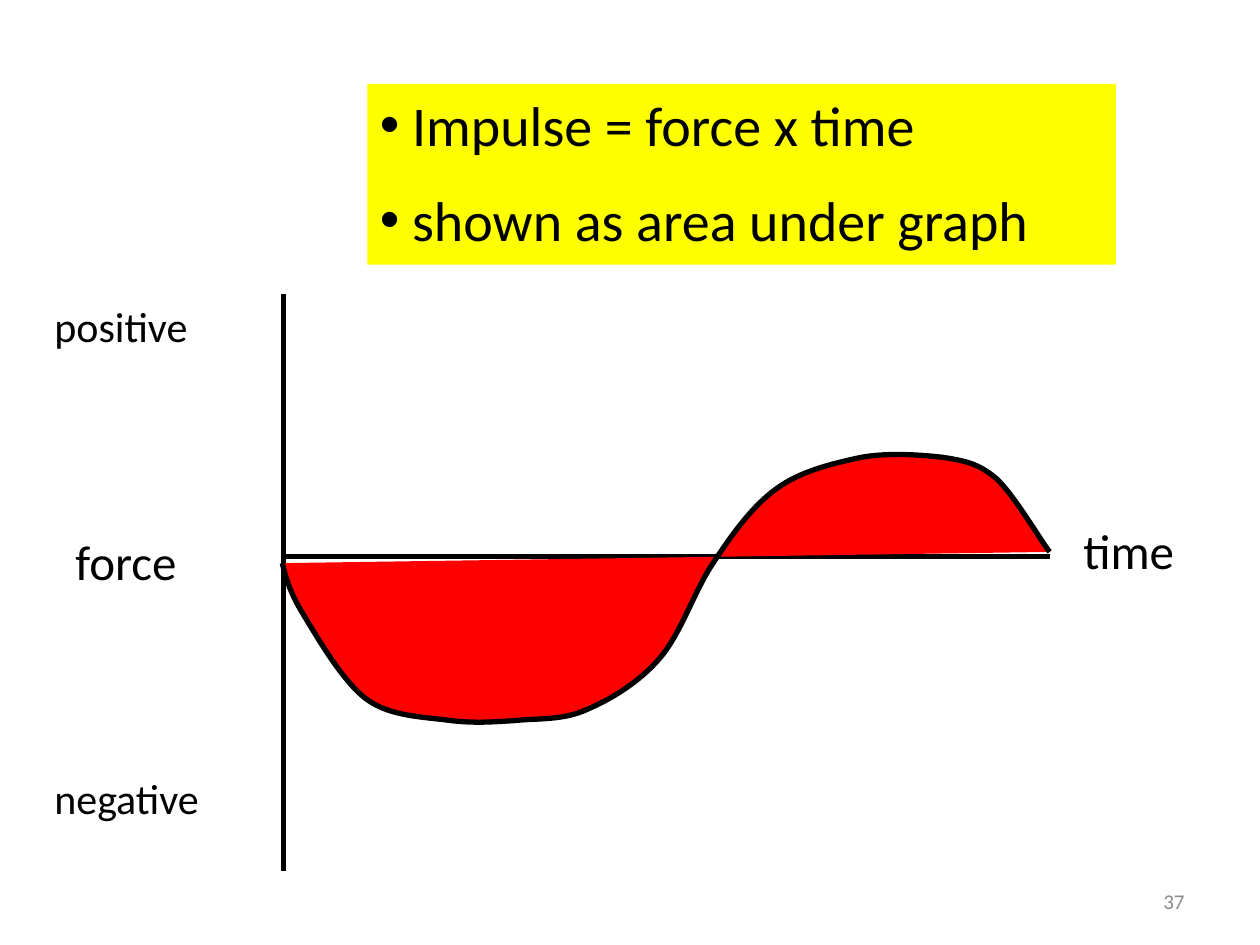
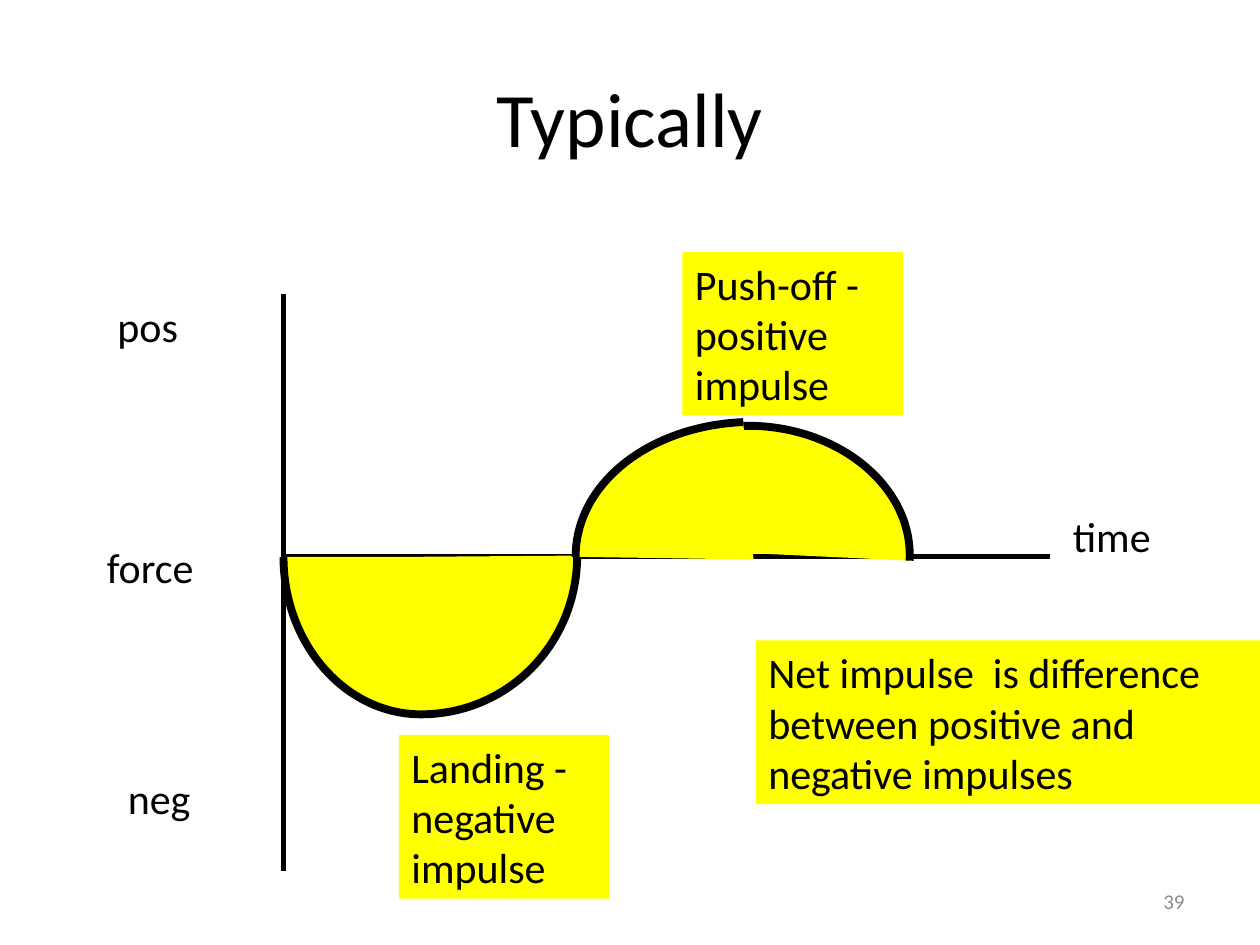
from copy import deepcopy
from dataclasses import dataclass

from lxml.etree import SubElement
from pptx import Presentation
from pptx.dml.color import RGBColor
from pptx.enum.shapes import MSO_CONNECTOR, MSO_SHAPE
from pptx.enum.text import MSO_ANCHOR, PP_ALIGN
from pptx.oxml.ns import qn
from pptx.presentation import Presentation as Deck
from pptx.slide import Slide
from pptx.util import Pt

Point = tuple[float, float]

BLACK = "000000"
GRAY = "8C8C8C"
YELLOW = "FFFF00"
RED = "FF0000"
FONT = "Calibri"
AXIS_WIDTH = 3
ARC_WIDTH = 4.5


@dataclass(frozen=True)
class TextBlock:
    lines: tuple[str, ...]
    left: float
    top: float
    width: float
    height: float
    size: float = 24
    color: str = BLACK
    fill: str | None = None
    align: PP_ALIGN = PP_ALIGN.LEFT
    anchor: MSO_ANCHOR = MSO_ANCHOR.TOP
    bullet: str | None = None


@dataclass(frozen=True)
class Axis:
    start: Point
    end: Point


@dataclass(frozen=True)
class Curve:
    controls: tuple[Point, ...]
    fill: str
    line_width: float
    center: Point | None = None


AXES = (
    Axis((162, 168), (162, 498)),
    Axis((600, 318), (162, 318)),
)

FORCE_CURVE = Curve(
    (
        (161.3, 321.8),
        (163.4, 330.5), (165.6, 338.4), (173.5, 351.4),
        (181.4, 364.3), (195.8, 389.5), (209.5, 399.6),
        (223.2, 409.7), (243.4, 409.7), (257.8, 411.8),
        (271.4, 413.3), (280.8, 412.6), (293.8, 411.8),
        (306.7, 410.4), (321.8, 411.8), (335.5, 405.4),
        (349.2, 399.6), (365.8, 389.5), (377.3, 375.8),
        (389.5, 361.4), (396.7, 337.7), (407.5, 321.8),
        (418.3, 305.3), (429.8, 289.4), (443.5, 279.4),
        (457.2, 269.3), (475.2, 265), (491.8, 261.4),
        (507.6, 258.5), (526.3, 259.9), (539.3, 261.4),
        (552.2, 263.5), (559.4, 265), (569.5, 273.6),
        (579.6, 283), (594.7, 308.9), (599.8, 315.4),
    ),
    RED, AXIS_WIDTH,
)

IMPULSE_SECTORS = (
    Curve(
        ((240.5, 408.2), (197.3, 408.2), (162, 367.9), (162, 318.2)),
        YELLOW, ARC_WIDTH, (240.5, 318.2),
    ),
    Curve(
        ((421.2, 243.4), (424.8, 243.4), (428.4, 243.4), (432, 243.4),
         (482.4, 245.5), (522, 280.1), (519.8, 320.4)),
        YELLOW, ARC_WIDTH, (428.4, 316.1),
    ),
    Curve(
        ((329.8, 317.5), (329.8, 367.9), (290.2, 408.2), (240.5, 408.2)),
        YELLOW, ARC_WIDTH, (239.8, 318.2),
    ),
    Curve(
        ((329, 318.2), (329, 317.5), (329, 317.5), (329, 316.8),
         (329.8, 275.8), (371.5, 243.4), (424.8, 241.2)),
        YELLOW, ARC_WIDTH, (430.6, 319.7),
    ),
)

AREA_LABELS = (
    TextBlock(("time",), 612, 294, 78, 41, size=28),
    TextBlock(("force",), 36, 300, 90, 41, size=28),
    TextBlock(("negative",), 24, 438, 108, 36),
    TextBlock(("positive",), 24, 168, 102, 36),
    TextBlock(
        (" Impulse = force x time", " shown as area under graph"),
        210, 48, 427.7, 103.2, size=32, fill=YELLOW, bullet="•",
    ),
)

TITLE = TextBlock(
    ("Typically",), 36, 21.6, 648, 90, size=44,
    align=PP_ALIGN.CENTER, anchor=MSO_ANCHOR.MIDDLE,
)

TYPICAL_LABELS = (
    TITLE,
    TextBlock(("time",), 606, 288, 66, 36),
    TextBlock(("force",), 54, 306, 78, 36),
    TextBlock(("neg",), 66, 438, 66, 36),
    TextBlock(("pos",), 60, 168, 66, 36),
)

IMPULSE_NOTES = (
    TextBlock(("Landing - negative impulse",), 228, 420, 120, 93.6, fill=YELLOW),
    TextBlock(("Push-off - positive impulse",), 390, 144, 126, 93.6, fill=YELLOW),
    TextBlock(
        ("Net impulse  is difference between positive and negative impulses",),
        432, 366, 288, 93.6, fill=YELLOW,
    ),
)


def rgb(color: str) -> RGBColor:
    return RGBColor.from_string(color)


def draw_text(slide: Slide, block: TextBlock) -> None:
    box = (Pt(block.left), Pt(block.top), Pt(block.width), Pt(block.height))
    if block.fill:
        shape = slide.shapes.add_shape(MSO_SHAPE.RECTANGLE, *box)
        shape.shadow.inherit = False
        shape.fill.solid()
        shape.fill.fore_color.rgb = rgb(block.fill)
        shape.line.fill.background()
    else:
        shape = slide.shapes.add_textbox(*box)
    frame = shape.text_frame
    frame.word_wrap = True
    frame.vertical_anchor = block.anchor
    for index, line in enumerate(block.lines):
        paragraph = frame.add_paragraph() if index else frame.paragraphs[0]
        paragraph.alignment = block.align
        if index:
            paragraph.space_before = Pt(block.size / 2)
        if block.bullet:
            properties = paragraph._p.get_or_add_pPr()
            SubElement(properties, qn("a:buFont"), typeface="Arial")
            SubElement(properties, qn("a:buChar"), char=block.bullet)
        run = paragraph.add_run()
        run.text = line
        run.font.name = FONT
        run.font.size = Pt(block.size)
        run.font.color.rgb = rgb(block.color)


def draw_axis(slide: Slide, axis: Axis) -> None:
    connector = slide.shapes.add_connector(
        MSO_CONNECTOR.STRAIGHT, *(Pt(value) for value in axis.start + axis.end)
    )
    connector.line.color.rgb = rgb(BLACK)
    connector.line.width = Pt(AXIS_WIDTH)
    SubElement(connector._element.spPr, qn("a:effectLst"))


def draw_curve(slide: Slide, curve: Curve) -> None:
    corners = (curve.center,) if curve.center else ()
    vertices = [(Pt(x), Pt(y)) for x, y in curve.controls + corners]
    builder = slide.shapes.build_freeform(*vertices[0])
    builder.add_line_segments(vertices[1:], close=bool(corners))
    shape = builder.convert_to_shape()
    shape.shadow.inherit = False
    shape.fill.solid()
    shape.fill.fore_color.rgb = rgb(curve.fill)
    shape.line.color.rgb = rgb(BLACK)
    shape.line.width = Pt(curve.line_width)

    outline = shape._element.find(".//" + qn("a:path"))
    segments = outline.findall(qn("a:lnTo"))[:len(curve.controls) - 1]
    for first in range(0, len(segments), 3):
        bezier = segments[first]
        bezier.tag = qn("a:cubicBezTo")
        for segment in segments[first + 1:first + 3]:
            bezier.append(segment[0])
            outline.remove(segment)

    if corners:
        area = deepcopy(outline)
        area.set("stroke", "0")
        outline.addnext(area)
        outline.set("fill", "none")
        for tag in ("a:lnTo", "a:close"):
            outline.remove(outline.find(qn(tag)))


def add_graph_slide(
    presentation: Deck, number: int, labels: tuple[TextBlock, ...]
) -> Slide:
    slide = presentation.slides.add_slide(presentation.slide_layouts[6])
    draw_text(slide, TextBlock(
        (str(number),), 516, 500.5, 168, 28.75, size=12, color=GRAY,
        align=PP_ALIGN.RIGHT, anchor=MSO_ANCHOR.MIDDLE,
    ))
    for axis in AXES:
        draw_axis(slide, axis)
    for label in labels:
        draw_text(slide, label)
    return slide


def main() -> None:
    presentation = Presentation()
    presentation.slide_width = Pt(720)
    presentation.slide_height = Pt(540)

    area_slide = add_graph_slide(presentation, 37, AREA_LABELS)
    draw_curve(area_slide, FORCE_CURVE)

    typical_slide = add_graph_slide(presentation, 39, TYPICAL_LABELS)
    for sector in IMPULSE_SECTORS:
        draw_curve(typical_slide, sector)
    for note in IMPULSE_NOTES:
        draw_text(typical_slide, note)

    presentation.save("out.pptx")


if __name__ == "__main__":
    main()
